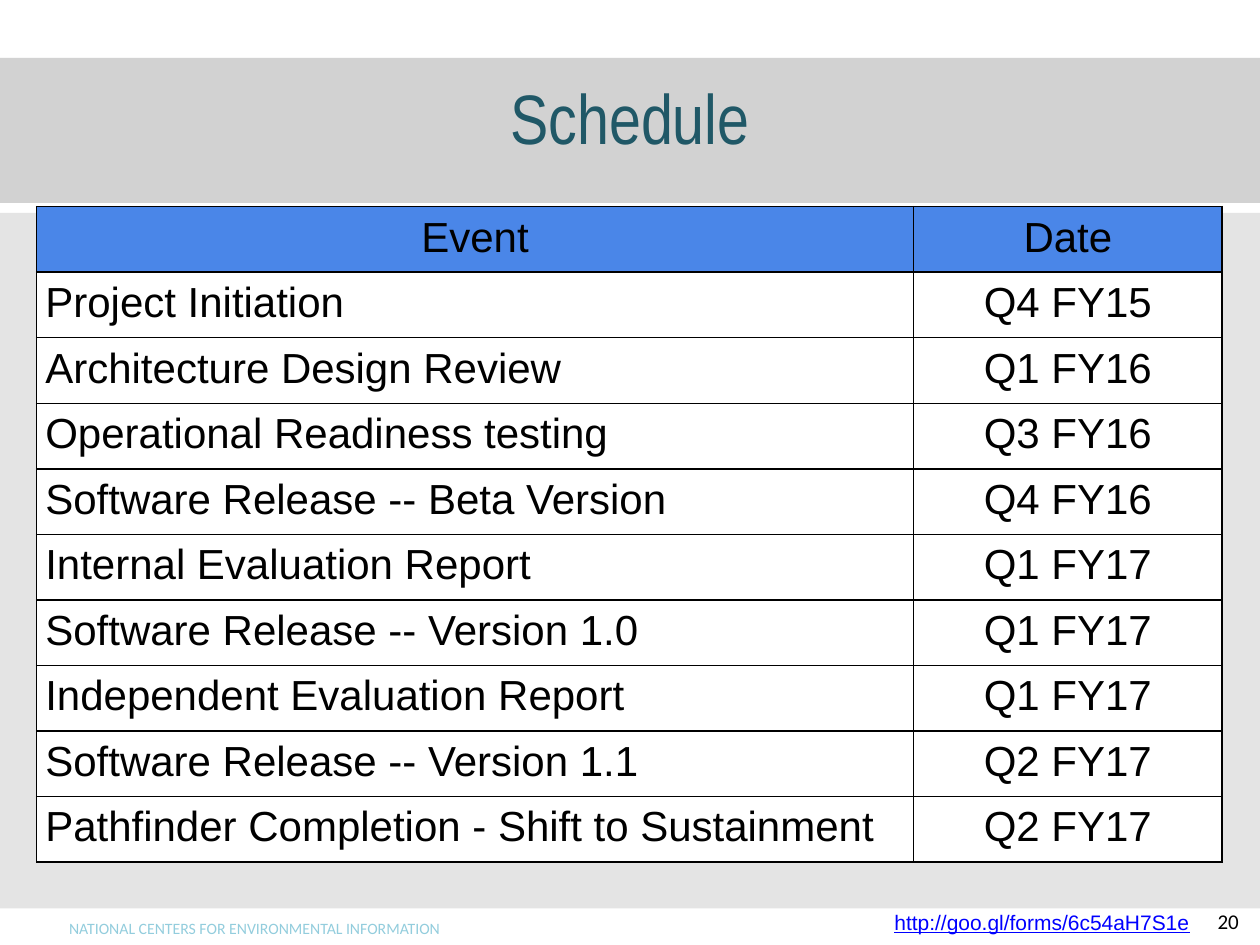
from lxml import etree
from pptx import Presentation
from pptx.dml.color import RGBColor
from pptx.enum.shapes import MSO_SHAPE
from pptx.enum.text import MSO_ANCHOR, PP_ALIGN
from pptx.oxml import parse_xml
from pptx.oxml.ns import qn
from pptx.util import Inches, Pt

LEFT, MID, RIGHT = PP_ALIGN.LEFT, PP_ALIGN.CENTER, PP_ALIGN.RIGHT
TOP, CENTER = MSO_ANCHOR.TOP, MSO_ANCHOR.MIDDLE
RECT = MSO_SHAPE.RECTANGLE
NS = "http://schemas.openxmlformats.org/drawingml/2006/main"


def rgb(code):
    return RGBColor.from_string(code)


def write(frame, text, size=12, font="Arial", color="000000", align=LEFT,
          anchor=TOP, pad=(0.1, 0.05), indent=0, line=False):
    """Fill a text frame; pad holds the side and the top/bottom margins."""
    frame.word_wrap = True
    frame.vertical_anchor = anchor
    frame.margin_left = Inches(pad[0] + indent)
    frame.margin_right = Inches(pad[0])
    frame.margin_top = frame.margin_bottom = Inches(pad[1])
    para = frame.paragraphs[0]
    para.alignment = align
    run = para.add_run()
    run.text = text
    run.font.size = Pt(size)
    run.font.name = font
    run.font.color.rgb = rgb(color)
    run.font.underline = line


deck = Presentation()
deck.slide_width, deck.slide_height = Inches(10), Inches(7.5)
slide = deck.slides.add_slide(deck.slide_layouts[6])
shapes = slide.shapes

# Background bands
for top, height, color in [(1.69, 5.52, "D8D8D8"), (0.46, 1.15, "BFBFBF")]:
    band = shapes.add_shape(RECT, 0, Inches(top), Inches(10), Inches(height))
    band.shadow.inherit = False
    band.line.fill.background()
    band.fill.solid()
    band.fill.fore_color.rgb = rgb(color)
    tint = band.fill._xPr.find(".//" + qn("a:srgbClr"))
    etree.SubElement(tint, qn("a:alpha"), val="69000")

# Title and footer
labels = [
    ((8.75, 7.16, 1.18, 0.27), "20", dict(font="Calibri", align=RIGHT)),
    ((0.45, 7.24, 8.51, 0.25), "NATIONAL CENTERS FOR ENVIRONMENTAL INFORMATION",
     dict(size=9, font="Calibri", color="93CDDD")),
    ((0.5, 0.3, 9, 1.25), "Schedule",
     dict(size=40, font="Arial Narrow", color="205867", align=MID,
          anchor=CENTER, pad=(0.1, 0.1))),
    ((6.16, 7.12, 3.84, 0.37), "http://goo.gl/forms/6c54aH7S1e",
     dict(color="0000FF", align=MID, pad=(0.1, 0.1), indent=0.38, line=True)),
]
for place, text, form in labels:
    box = shapes.add_textbox(*map(Inches, place))
    write(box.text_frame, text, **form)

# Schedule table
events = [
    ("Event", "Date"),
    ("Project Initiation", "Q4 FY15"),
    ("Architecture Design Review", "Q1 FY16"),
    ("Operational Readiness testing", "Q3 FY16"),
    ("Software Release -- Beta Version", "Q4 FY16"),
    ("Internal Evaluation Report", "Q1 FY17"),
    ("Software Release -- Version 1.0", "Q1 FY17"),
    ("Independent Evaluation Report", "Q1 FY17"),
    ("Software Release -- Version 1.1", "Q2 FY17"),
    ("Pathfinder Completion - Shift to Sustainment", "Q2 FY17"),
]
widths = [6.96, 2.45]
step = 0.51
table = shapes.add_table(len(events), len(widths), Inches(0.29), Inches(1.64),
                         Inches(sum(widths)), Inches(step * len(events))).table
table.horz_banding = False
for col, width in zip(table.columns, widths):
    col.width = Inches(width)

for r, event in enumerate(events):
    table.rows[r].height = Inches(step)
    for c, text in enumerate(event):
        cell = table.cell(r, c)
        write(cell.text_frame, text, size=24,
              align=LEFT if r and not c else MID)
        cell.margin_left = cell.margin_right = Inches(0.07)
        cell.margin_top = cell.margin_bottom = Inches(0.06)
        # Cell margins and anchor belong to the cell, not to its text body
        body = cell.text_frame._txBody.find(qn("a:bodyPr"))
        body.attrib.clear()
        cell.fill.solid()
        cell.fill.fore_color.rgb = rgb("FFFFFF" if r else "4A86E8")
        props = cell._tc.get_or_add_tcPr()
        for spot, side in enumerate(("lnL", "lnR", "lnT", "lnB")):
            props.insert(spot, parse_xml(
                f'<a:{side} xmlns:a="{NS}" w="{Pt(1)}"><a:solidFill>'
                f'<a:srgbClr val="000000"/></a:solidFill></a:{side}>'))

deck.save("out.pptx")
